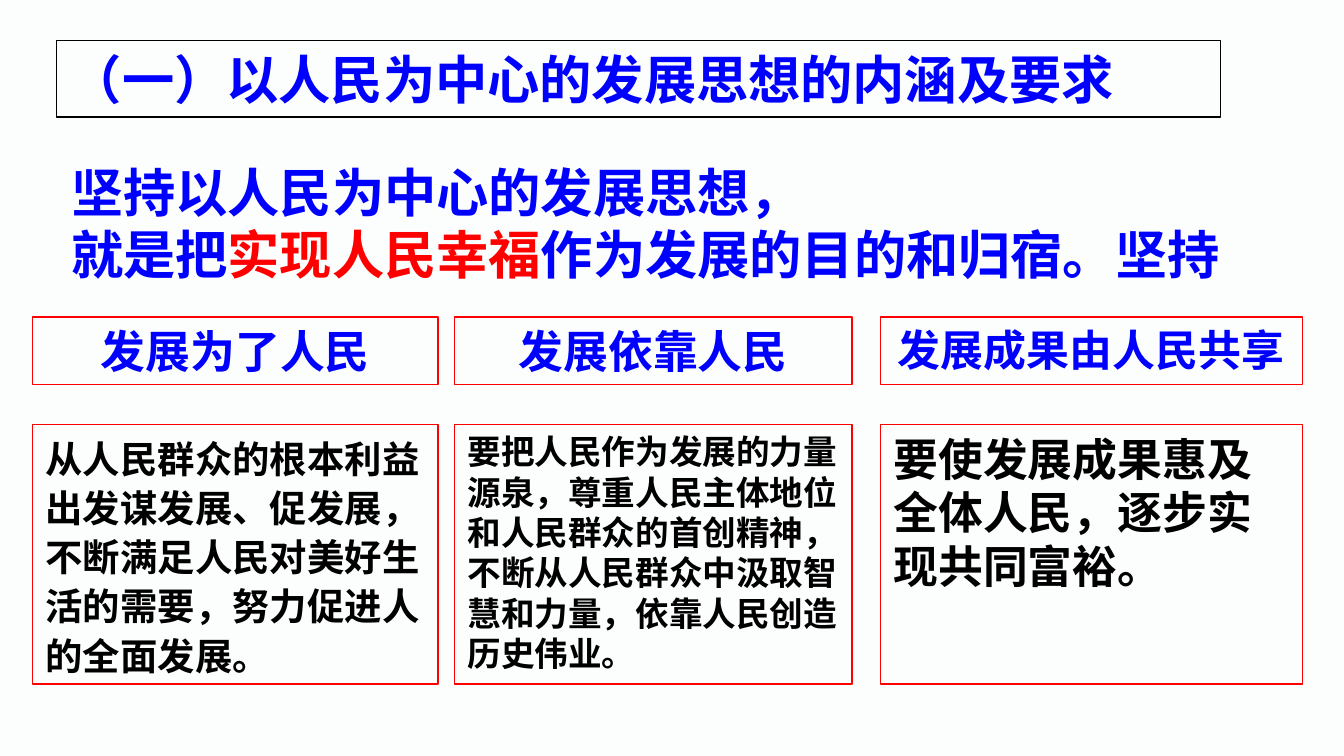
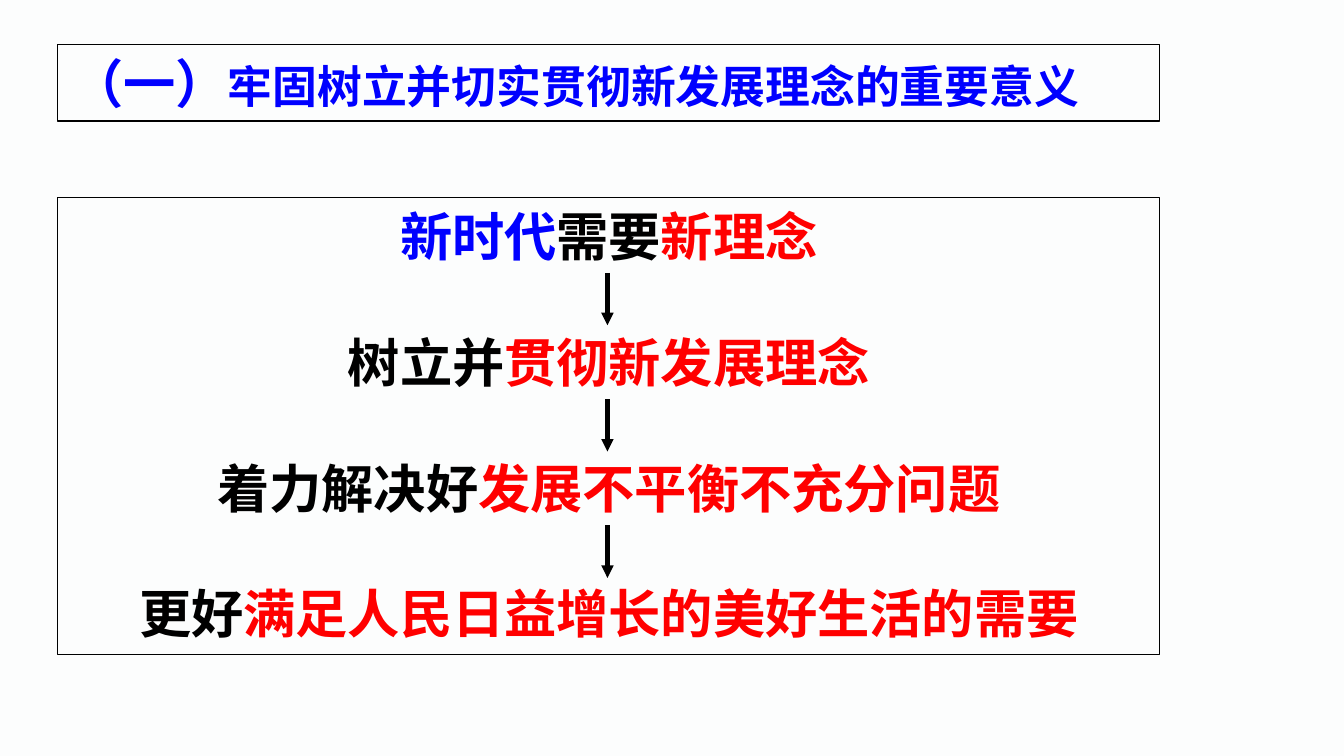
"""Build two slides on people-centred development and the new development concept."""
import pptx
import pptx.dml.color
import pptx.enum.shapes
import pptx.enum.text
import pptx.util
from pptx.oxml.ns import qn

Inches = pptx.util.Inches
Pt = pptx.util.Pt
ALIGN = pptx.enum.text.PP_ALIGN
ANCHOR = pptx.enum.text.MSO_ANCHOR

PAGE_WIDTH = Inches(10)
PAGE_HEIGHT = PAGE_WIDTH * 9 // 16
PAPER, BLACK, BLUE, RED = "FCFDFD", "000000", "0000FF", "FF0000"
LATIN, CHINESE = "Arial", "Noto Sans CJK SC"
LINE_STEP = 33.75

COLUMNS = [
    (0.24, 3.02, "发展为了人民", 24,
     "从人民群众的根本利益出发谋发展、促发展， 不断满足人民对美好生活的需要，努力促进人的全面发展。", 20, 1.1),
    (3.38, 2.96, "发展依靠人民", 24,
     "要把人民作为发展的力量源泉，尊重人民主体地位和人民群众的首创精神，"
     "不断从人民群众中汲取智慧和力量，依靠人民创造历史伟业。", 18, 1.0),
    (6.55, 3.14, "发展成果由人民共享", 23,
     "要使发展成果惠及全体人民，逐步实现共同富裕。", 24, 1.0),
]
AIM = [
    [("坚持以人民为中心的发展思想，", BLUE)],
    [("就是把", BLUE), ("实现人民幸福", RED), ("作为发展的目的和归宿。坚持", BLUE)],
]
STEPS = [
    [("新时代", BLUE), ("需要", BLACK), ("新理念", RED)],
    [("树立并", BLACK), ("贯彻新发展理念", RED)],
    [("着力解决好", BLACK), ("发展不平衡不充分问题", RED)],
    [("更好", BLACK), ("满足人民日益增长的美好生活的需要", RED)],
]


def color(value):
    return pptx.dml.color.RGBColor.from_string(value)


def apply(target, values):
    for name, value in values.items():
        setattr(target, name, value)


def place(shape, left, top, width, height):
    apply(shape, {"left": Inches(left), "top": Inches(top),
                  "width": Inches(width), "height": Inches(height)})


def outline(shape, line_color, weight=0.75):
    shape.line.color.rgb = color(line_color)
    shape.line.width = Pt(weight)


def add_span(para, text, size, text_color, font=CHINESE):
    span = para.add_run()
    span.text = text
    apply(span.font, {"size": Pt(size), "bold": True, "name": font})
    span.font.color.rgb = color(text_color)
    east_asian = span.font._element.makeelement(qn("a:ea"), {"typeface": CHINESE})
    span.font._element.find(qn("a:latin")).addnext(east_asian)


def prepare(shape, anchor=ANCHOR.TOP):
    frame = shape.text_frame
    apply(frame, {"word_wrap": True, "vertical_anchor": anchor,
                  "auto_size": pptx.enum.text.MSO_AUTO_SIZE.NONE,
                  "margin_left": Inches(0.1), "margin_right": Inches(0.1),
                  "margin_top": Inches(0.05), "margin_bottom": Inches(0.05)})
    return frame


def add_title(page, position, spans):
    title = page.shapes.title
    place(title, *position)
    outline(title, BLACK)
    para = prepare(title, ANCHOR.MIDDLE).paragraphs[0]
    para.alignment = ALIGN.LEFT
    for text, size, font in spans:
        add_span(para, text, size, BLUE, font)


def fill_body(page, position, lines, align, gap=0):
    body = page.placeholders[1]
    place(body, *position)
    frame = prepare(body)
    for index, spans in enumerate(lines):
        para = frame.add_paragraph() if index else frame.paragraphs[0]
        apply(para, {"alignment": align, "space_before": Pt(gap if index else 0)})
        properties = para._p.get_or_add_pPr()
        properties.set("marL", "0")
        properties.set("indent", "0")
        properties.append(properties.makeelement(qn("a:buNone"), {}))
        for text, text_color in spans:
            add_span(para, text, 28, text_color)
    return body


def add_card(page, position, text, size, text_color, align, spacing=1.0):
    box = page.shapes.add_shape(pptx.enum.shapes.MSO_SHAPE.RECTANGLE,
                                *(Inches(length) for length in position))
    box.shadow.inherit = False
    box.fill.background()
    outline(box, RED)
    para = prepare(box).paragraphs[0]
    apply(para, {"alignment": align, "line_spacing": spacing})
    add_span(para, text, size, text_color)


def add_arrow(page, x, top, length):
    arrow = page.shapes.add_connector(pptx.enum.shapes.MSO_CONNECTOR.STRAIGHT,
                                      Inches(x), Inches(top), Inches(x), Inches(top + length))
    outline(arrow, BLACK, 2.25)
    line = arrow.line._get_or_add_ln()
    line.append(line.makeelement(qn("a:tailEnd"), {"type": "triangle"}))
    properties = arrow._element.spPr
    properties.append(properties.makeelement(qn("a:effectLst"), {}))


def build_meaning(page):
    add_title(page, (0.42, 0.3, 8.66, 0.57),
              [("（一）以人民为中心的发展思想的内涵及要求", 28, LATIN)])
    fill_body(page, (0.43, 1.14, 9.15, 1.04), AIM, ALIGN.LEFT)
    for left, width, heading, heading_size, text, size, spacing in COLUMNS:
        add_card(page, (left, 2.36, width, 0.5), heading, heading_size, BLUE, ALIGN.CENTER)
        add_card(page, (left, 3.16, width, 1.93), text, size, BLACK, ALIGN.LEFT, spacing)


def build_significance(page):
    add_title(page, (0.43, 0.33, 8.2, 0.57),
              [("（一）", 28, LATIN), ("牢固树立并切实贯彻新发展理念的重要意义", 24, CHINESE)])
    body = fill_body(page, (0.43, 1.47, 8.2, 3.4), STEPS, ALIGN.CENTER, LINE_STEP)
    outline(body, BLACK)
    for index in range(len(STEPS) - 1):
        add_arrow(page, 4.52, 2.03 + 0.94 * index, 0.39)


def main():
    deck = pptx.Presentation()
    apply(deck, {"slide_width": PAGE_WIDTH, "slide_height": PAGE_HEIGHT})
    background = deck.slide_master.background.fill
    background.solid()
    background.fore_color.rgb = color(PAPER)
    for build in (build_meaning, build_significance):
        build(deck.slides.add_slide(deck.slide_layouts[1]))
    deck.save("out.pptx")


if __name__ == "__main__":
    main()
